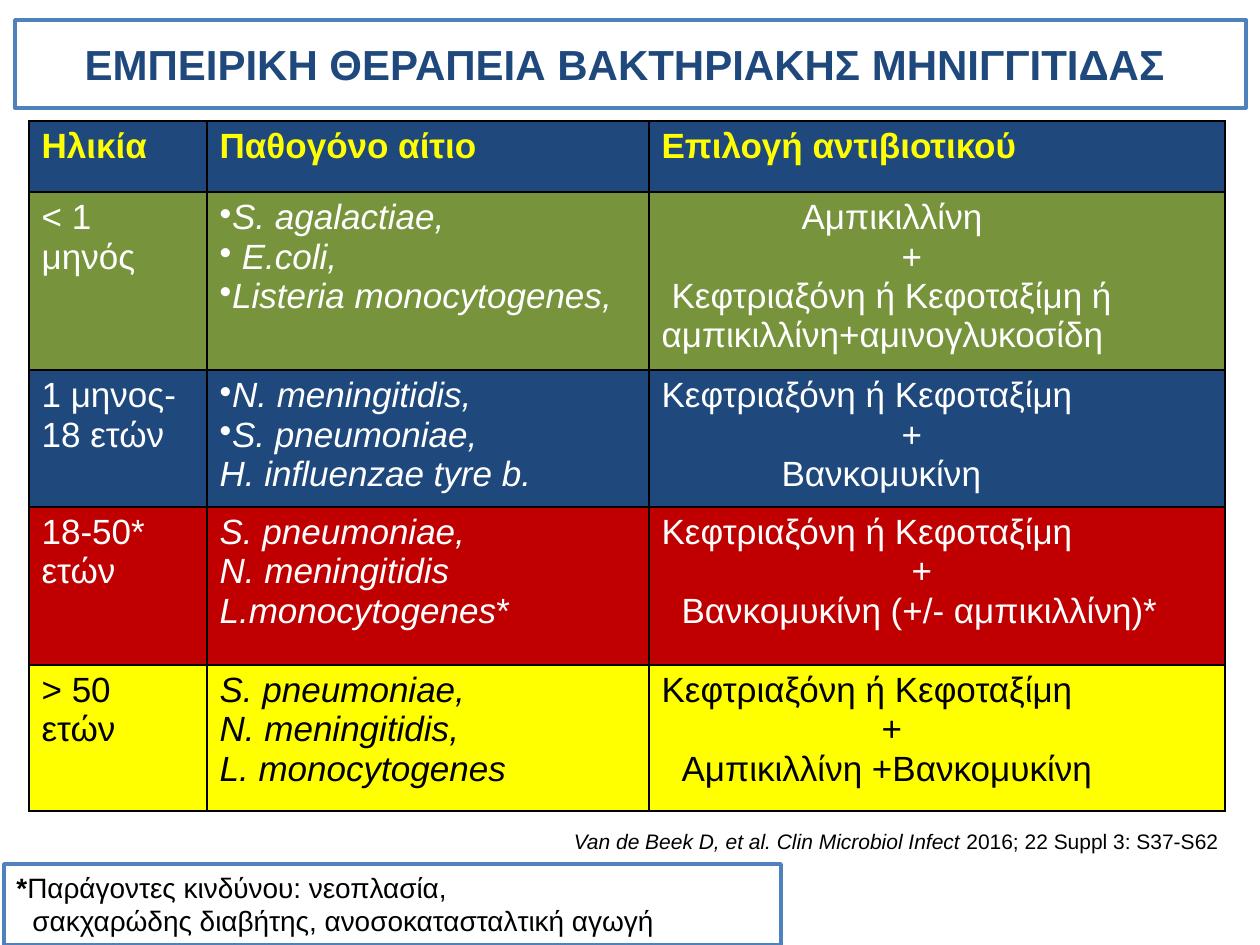
from dataclasses import dataclass
from typing import Optional

import pptx
import pptx.dml.color
import pptx.enum.shapes
import pptx.enum.text
import pptx.oxml.ns
import pptx.util
from lxml import etree

EMU_PER_PX = 914400 / 126
SPACE = 10  # first-line indent step in px, one space of the table text
FONT = "Arial"
COLORS = {
    "white": "FFFFFF",
    "black": "000000",
    "navy": "1F497D",
    "outline": "4F81BD",
    "green": "77933C",
    "red": "C00000",
    "yellow": "FFFF00",
}
ALIGN = pptx.enum.text.PP_ALIGN
ANCHOR = pptx.enum.text.MSO_ANCHOR


@dataclass(frozen=True)
class Run:
    text: str
    bold: Optional[bool] = None  # None takes the format of the whole text
    italic: Optional[bool] = None


@dataclass(frozen=True)
class Line:
    runs: tuple[Run, ...]
    indent: int = 0
    bullet: bool = False


@dataclass(frozen=True)
class AgeGroup:
    fill: str
    color: str
    height: int
    age: list[Line]
    pathogens: list[Line]
    antibiotics: list[Line]


@dataclass(frozen=True)
class Box:
    left: int
    top: int
    width: int
    height: int


def px(length: int) -> int:
    return pptx.util.Emu(round(length * EMU_PER_PX))


def rgb(name: str) -> pptx.dml.color.RGBColor:
    return pptx.dml.color.RGBColor.from_string(COLORS[name])


def line(text: str, indent: int = 0, bullet: bool = False) -> Line:
    return Line((Run(text),), indent, bullet)


def write_text(frame, lines: list[Line], *, size: int = 20, color: str = "black",
               bold: bool = False, italic: bool = False, align=ALIGN.LEFT) -> None:
    frame.word_wrap = True
    for number, item in enumerate(lines):
        paragraph = frame.add_paragraph() if number else frame.paragraphs[0]
        paragraph.alignment = align
        properties = paragraph._p.get_or_add_pPr()
        properties.set("marL", "0")
        properties.set("indent", str(px(item.indent)))
        if item.bullet:
            bullet = etree.SubElement(properties, pptx.oxml.ns.qn("a:buChar"))
            bullet.set("char", "•")
        for part in item.runs:
            run = paragraph.add_run()
            run.text = part.text
            run.font.name = FONT
            run.font.size = pptx.util.Pt(size)
            run.font.color.rgb = rgb(color)
            run.font.bold = bold if part.bold is None else part.bold
            run.font.italic = italic if part.italic is None else part.italic


def add_framed_box(slide, box: Box, anchor):
    shape = slide.shapes.add_shape(
        pptx.enum.shapes.MSO_SHAPE.RECTANGLE,
        px(box.left), px(box.top), px(box.width), px(box.height))
    shape.shadow.inherit = False
    shape.fill.solid()
    shape.fill.fore_color.rgb = rgb("white")
    shape.line.color.rgb = rgb("outline")
    shape.line.width = pptx.util.Pt(2)
    shape.text_frame.vertical_anchor = anchor
    return shape.text_frame


def style_cell(cell, fill: str) -> None:
    properties = cell._tc.get_or_add_tcPr()
    for side in ("a:lnL", "a:lnR", "a:lnT", "a:lnB"):
        border = etree.SubElement(properties, pptx.oxml.ns.qn(side), w=str(pptx.util.Pt(1)))
        solid = etree.SubElement(border, pptx.oxml.ns.qn("a:solidFill"))
        etree.SubElement(solid, pptx.oxml.ns.qn("a:srgbClr"), val=COLORS["black"])
    cell.fill.solid()
    cell.fill.fore_color.rgb = rgb(fill)


def add_therapy_table(slide, left: int, top: int, widths: list[int], header_height: int,
                      headers: list[str], groups: list[AgeGroup]) -> None:
    heights = [header_height] + [group.height for group in groups]
    table = slide.shapes.add_table(
        len(heights), len(widths), px(left), px(top), px(sum(widths)), px(sum(heights))).table
    table.first_row = False
    table.horz_banding = False
    for column, width in zip(table.columns, widths):
        column.width = px(width)
    for row, height in zip(table.rows, heights):
        row.height = px(height)
    for column, header in enumerate(headers):
        cell = table.cell(0, column)
        style_cell(cell, "navy")
        write_text(cell.text_frame, [line(header)], color="yellow", bold=True)
    for row, group in enumerate(groups, start=1):
        for column, lines in enumerate((group.age, group.pathogens, group.antibiotics)):
            cell = table.cell(row, column)
            style_cell(cell, group.fill)
            write_text(cell.text_frame, lines, color=group.color, italic=column == 1)


CEPHALOSPORIN = line("Κεφτριαξόνη ή Κεφοταξίμη")
GROUPS = [
    AgeGroup("green", "white", 178,
             [line("< 1"), line("μηνός")],
             [line("S. agalactiae,", bullet=True),
              line(" E.coli,", bullet=True),
              line("Listeria monocytogenes,", bullet=True)],
             [line("Αμπικιλλίνη", 14 * SPACE),
              line("+", 24 * SPACE),
              line("Κεφτριαξόνη ή Κεφοταξίμη ή αμπικιλλίνη+αμινογλυκοσίδη", SPACE)]),
    AgeGroup("navy", "white", 137,
             [line("1 μηνος-"), line("18 ετών")],
             [line("N. meningitidis,", bullet=True),
              line("S. pneumoniae,", bullet=True),
              line("H. influenzae tyre b.")],
             [CEPHALOSPORIN, line("+", 24 * SPACE), line("Βανκομυκίνη", 12 * SPACE)]),
    AgeGroup("red", "white", 158,
             [line("18-50*"), line("ετών")],
             [line("S. pneumoniae,"),
              line("N. meningitidis"),
              Line((Run("L.monocytogenes"), Run("*", italic=False)))],
             [CEPHALOSPORIN, line("+", 25 * SPACE),
              line("Βανκομυκίνη (+/- αμπικιλλίνη)*", 2 * SPACE)]),
    AgeGroup("yellow", "black", 146,
             [line("> 50"), line("ετών")],
             [line("S. pneumoniae,"), line("N. meningitidis,"), line("L. monocytogenes")],
             [CEPHALOSPORIN, line("+", 22 * SPACE),
              line("Αμπικιλλίνη +Βανκομυκίνη", 2 * SPACE)]),
]


def main() -> None:
    presentation = pptx.Presentation()
    presentation.slide_width = px(1260)
    presentation.slide_height = px(945)
    slide = presentation.slides.add_slide(presentation.slide_layouts[6])

    # Therapy by age group
    add_therapy_table(slide, 29, 121, [178, 442, 576], 71,
                      ["Ηλικία", "Παθογόνο αίτιο", "Επιλογή αντιβιοτικού"], GROUPS)

    # Title
    title = add_framed_box(slide, Box(15, 20, 1231, 88), ANCHOR.MIDDLE)
    write_text(title, [line("ΕΜΠΕΙΡΙΚΗ ΘΕΡΑΠΕΙΑ ΒΑΚΤΗΡΙΑΚΗΣ ΜΗΝΙΓΓΙΤΙΔΑΣ ")],
               size=24, color="navy", bold=True, align=ALIGN.CENTER)

    # Risk factors
    risk_factors = add_framed_box(slide, Box(4, 864, 777, 81), ANCHOR.TOP)
    write_text(risk_factors,
               [Line((Run("*", bold=True), Run("Παράγοντες κινδύνου: νεοπλασία,"))),
                line("σακχαρώδης διαβήτης, ανοσοκατασταλτική αγωγή", 16)], size=16)

    # Citation
    citation = slide.shapes.add_textbox(px(323), px(822), px(908), px(38))
    write_text(citation.text_frame,
               [Line((Run("Van de Beek D, et al. Clin Microbiol Infect ", italic=True),
                      Run("2016; 22 Suppl 3: S37-S62")))], size=12, align=ALIGN.RIGHT)

    presentation.save("out.pptx")


if __name__ == "__main__":
    main()
